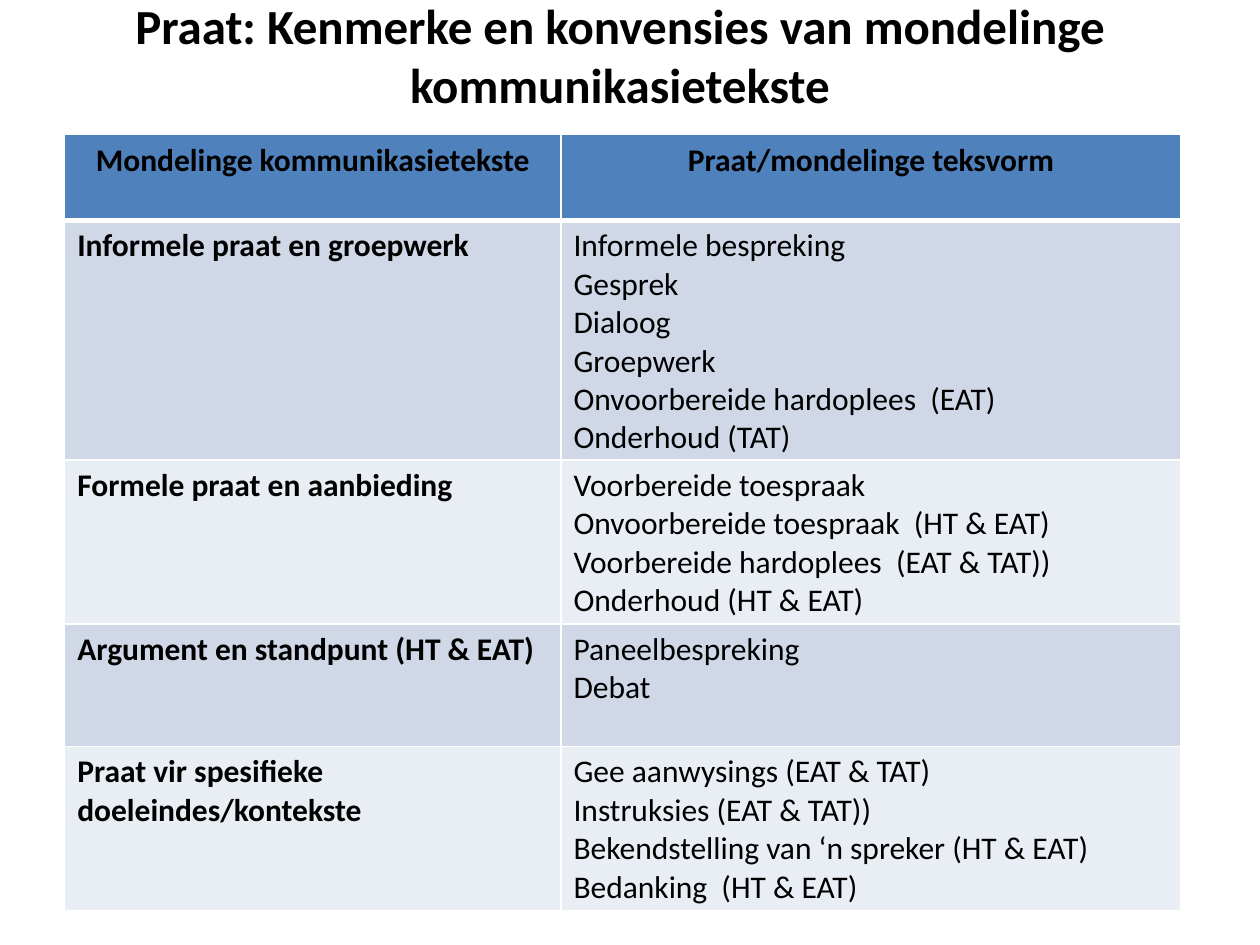
import pptx
import pptx.dml.color
import pptx.enum.text
import pptx.oxml
import pptx.oxml.ns
import pptx.util

Pt = pptx.util.Pt
ALIGN = pptx.enum.text.PP_ALIGN
ANCHOR = pptx.enum.text.MSO_ANCHOR

TITLE = "Praat: Kenmerke en konvensies van mondelinge kommunikasietekste"
HEADINGS = ["Mondelinge kommunikasietekste", "Praat/mondelinge teksvorm"]
CATEGORIES = [
    ("Informele praat en groepwerk",
     ["Informele bespreking", "Gesprek", "Dialoog", "Groepwerk",
      "Onvoorbereide hardoplees  (EAT)", "Onderhoud (TAT)"]),
    ("Formele praat en aanbieding",
     ["Voorbereide toespraak", "Onvoorbereide toespraak  (HT & EAT)",
      "Voorbereide hardoplees  (EAT & TAT))", "Onderhoud (HT & EAT)"]),
    ("Argument en standpunt (HT & EAT)",
     ["Paneelbespreking", "Debat"]),
    ("Praat vir spesifieke doeleindes/kontekste",
     ["Gee aanwysings (EAT & TAT)", "Instruksies (EAT & TAT))",
      "Bekendstelling van ‘n spreker (HT & EAT)", "Bedanking  (HT & EAT)"]),
]


def rgb(hex_code):
    return pptx.dml.color.RGBColor.from_string(hex_code)


class SlideBuilder:
    font_name = "Calibri"
    ink = "000000"
    rule = "FFFFFF"
    header_fill = "4F81BD"
    band_fills = ("D0D8E8", "E9EDF4")

    def __init__(self, slide):
        self.slide = slide

    def set_text(self, frame, text, size, bold, align):
        frame.text = text
        for paragraph in frame.paragraphs:
            paragraph.alignment = align
            for run in paragraph.runs:
                run.font.name = self.font_name
                run.font.size = Pt(size)
                run.font.bold = bold
                run.font.color.rgb = rgb(self.ink)

    def title(self, text, left, top, width, height):
        frame = self.slide.shapes.add_textbox(
            Pt(left), Pt(top), Pt(width), Pt(height)).text_frame
        frame.word_wrap = True
        frame.vertical_anchor = ANCHOR.MIDDLE
        self.set_text(frame, text, 28, True, ALIGN.CENTER)

    def border(self, cell, side, weight):
        properties = cell._tc.get_or_add_tcPr()
        properties.append(pptx.oxml.parse_xml(
            f'<a:ln{side} {pptx.oxml.ns.nsdecls("a")} w="{Pt(weight)}">'
            f'<a:solidFill><a:srgbClr val="{self.rule}"/></a:solidFill>'
            f'</a:ln{side}>'))

    def cell(self, cell, text, fill, bold, align, top_rule=1, bottom_rule=1):
        self.set_text(cell.text_frame, text, 18, bold, align)
        for side, weight in (("L", 1), ("R", 1),
                             ("T", top_rule), ("B", bottom_rule)):
            self.border(cell, side, weight)
        cell.fill.solid()
        cell.fill.fore_color.rgb = rgb(fill)

    def table(self, headings, categories, left, top, widths, heights):
        table = self.slide.shapes.add_table(
            len(heights), len(widths), Pt(left), Pt(top),
            Pt(sum(widths)), Pt(sum(heights))).table
        for column, width in zip(table.columns, widths):
            column.width = Pt(width)
        for row, height in zip(table.rows, heights):
            row.height = Pt(height)
        for column, heading in enumerate(headings):
            self.cell(table.cell(0, column), heading, self.header_fill,
                      True, ALIGN.CENTER, bottom_rule=3)
        for row, (category, forms) in enumerate(categories, start=1):
            fill = self.band_fills[(row - 1) % 2]
            top_rule = 3 if row == 1 else 1
            self.cell(table.cell(row, 0), category, fill,
                      True, ALIGN.LEFT, top_rule)
            self.cell(table.cell(row, 1), "\n".join(forms), fill,
                      False, ALIGN.LEFT, top_rule)


def main():
    deck = pptx.Presentation()
    deck.slide_width, deck.slide_height = Pt(720), Pt(540)
    builder = SlideBuilder(deck.slides.add_slide(deck.slide_layouts[6]))
    builder.title(TITLE, 16.5, 0, 675.5, 62)
    builder.table(HEADINGS, CATEGORIES, 37, 77,
                  widths=[283.6, 354.4],
                  heights=[49, 137, 93.6, 70, 93.6])
    deck.save("out.pptx")


if __name__ == "__main__":
    main()
